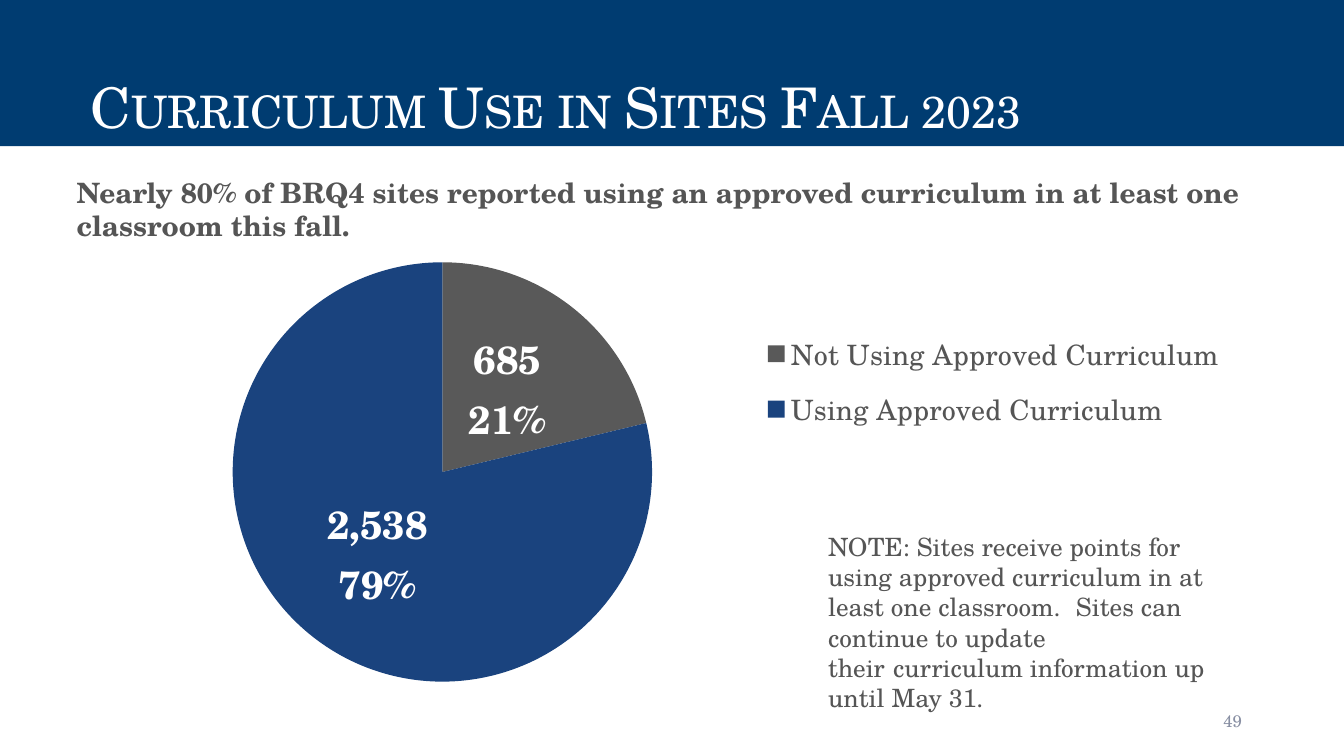
import lxml.etree
import pptx
import pptx.chart.data
import pptx.dml.color
import pptx.enum.chart
import pptx.enum.text
import pptx.oxml
import pptx.oxml.ns
import pptx.util

Cm = pptx.util.Cm
Pt = pptx.util.Pt
RGBColor = pptx.dml.color.RGBColor
Anchor = pptx.enum.text.MSO_ANCHOR
Align = pptx.enum.text.PP_ALIGN
qn = pptx.oxml.ns.qn

NAVY = RGBColor(0x00, 0x3C, 0x71)
BLUE = RGBColor(0x1A, 0x43, 0x7E)
SLATE = RGBColor(0x59, 0x59, 0x59)
TEXT_GREY = RGBColor(0x55, 0x55, 0x55)
PAGE_GREY = RGBColor(0x88, 0x8F, 0xA3)
WHITE = RGBColor(0xFF, 0xFF, 0xFF)
HARD_SPACE = chr(160)


class CurriculumSlide:
    """Holds the typeface and the slide that its methods add to."""

    typeface = "TeX Gyre Schola"

    def __init__(self, deck):
        self.slide = deck.slides.add_slide(deck.slide_layouts[5])

    def style(self, font, size, color, bold=False):
        font.name = self.typeface
        font.size = Pt(size)
        font.color.rgb = color
        font.bold = bold

    def place(self, shape, box):
        shape.left, shape.top, shape.width, shape.height = map(Cm, box)

    def title(self, wording, box):
        banner = self.slide.shapes.title
        self.place(banner, box)
        banner.fill.solid()
        banner.fill.fore_color.rgb = NAVY
        frame = banner.text_frame
        frame.text = wording
        frame.word_wrap = True
        frame.auto_size = pptx.enum.text.MSO_AUTO_SIZE.NONE
        frame.vertical_anchor = Anchor.BOTTOM
        frame.margin_left = Cm(2.29)
        line = frame.paragraphs[0]
        line.alignment = Align.LEFT
        line.line_spacing = 0.9
        font = line.runs[0].font
        self.style(font, 40, WHITE)
        line.runs[0]._r.get_or_add_rPr().set("cap", "small")

    def text(self, wording, box, size, color, bold=False,
             align=Align.LEFT, anchor=Anchor.TOP):
        frame = self.slide.shapes.add_textbox(*map(Cm, box)).text_frame
        frame.word_wrap = True
        frame.vertical_anchor = anchor
        frame.text = wording
        frame.paragraphs[0].alignment = align
        self.style(frame.paragraphs[0].runs[0].font, size, color, bold)

    def pie(self, slices, box, pie_area, legend_area):
        """Slices are (category, value, colour); areas are chart fractions."""
        data = pptx.chart.data.CategoryChartData(number_format="#,##0")
        data.categories = [category for category, _, _ in slices]
        data.add_series("Series 1", [value for _, value, _ in slices])
        chart = self.slide.shapes.add_chart(
            pptx.enum.chart.XL_CHART_TYPE.PIE, *map(Cm, box), data).chart
        chart.has_title = False
        chart.font.name = "Arial"
        chart.font.size = Pt(10)
        chart.font.color.rgb = NAVY

        plot = chart.plots[0]
        plot.vary_by_categories = True
        for index, (_, _, color) in enumerate(slices):
            wedge = plot.series[0].points[index].format
            wedge.fill.solid()
            wedge.fill.fore_color.rgb = color
            wedge.line.fill.background()

        labels = plot.series[0].data_labels
        labels.show_value = True
        labels.show_percentage = True
        labels.position = pptx.enum.chart.XL_LABEL_POSITION.CENTER
        self.style(labels.font, 28, WHITE, bold=True)
        separator = lxml.etree.Element(qn("c:separator"))
        separator.text = "\n"
        last_flag = labels._element.find(qn("c:showBubbleSize"))
        if last_flag is None:
            last_flag = labels._element.find(qn("c:showPercent"))
        last_flag.addnext(separator)

        chart.has_legend = True
        legend = chart.legend
        legend.position = pptx.enum.chart.XL_LEGEND_POSITION.RIGHT
        legend.include_in_layout = False
        self.style(legend.font, 20, TEXT_GREY)

        plot_area = chart._chartSpace.chart.plotArea
        for old in plot_area.findall(qn("c:layout")):
            plot_area.remove(old)
        plot_area.insert(0, self.layout(pie_area, inner=True))
        for old in legend._element.findall(qn("c:layout")):
            legend._element.remove(old)
        legend._element.find(qn("c:legendPos")).addnext(
            self.layout(legend_area))

    def layout(self, area, inner=False):
        layout = lxml.etree.Element(qn("c:layout"))
        manual = lxml.etree.SubElement(layout, qn("c:manualLayout"))
        settings = [("layoutTarget", "inner")] if inner else []
        settings += [("xMode", "edge"), ("yMode", "edge")]
        settings += zip("xywh", map(str, area))
        for tag, setting in settings:
            lxml.etree.SubElement(manual, qn("c:" + tag)).set("val", setting)
        return layout


def main():
    deck = pptx.Presentation()
    deck.slide_width, deck.slide_height = Cm(33.87), Cm(19.05)
    page = CurriculumSlide(deck)
    page.title("Curriculum Use in Sites Fall 2023", (0, 0, 33.87, 3.68))
    page.text("49", (23.93, 17.65, 7.62, 1.02), 12, PAGE_GREY,
              align=Align.RIGHT, anchor=Anchor.MIDDLE)
    page.pie(
        [("Not Using Approved Curriculum", 685, SLATE),
         ("Using Approved Curriculum", 2538, BLUE)],
        (1.47, 6.25, 31.22, 12.01),
        pie_area=(0.14, 0.03, 0.34, 0.88),
        legend_area=(0.57, 0.15, 0.37, 0.26))
    page.text(
        "NOTE: Sites receive points for using approved curriculum in at "
        f"least one classroom.{HARD_SPACE} Sites can continue to update "
        f"their{HARD_SPACE}curriculum information up until May 31.",
        (20.62, 13.26, 10.9, 4.11), 18, TEXT_GREY)
    page.text(
        "Nearly 80% of BRQ4 sites reported using an approved curriculum "
        "in at least one classroom this fall.",
        (1.68, 4.29, 30.51, 1.96), 20, TEXT_GREY, bold=True)
    deck.save("out.pptx")


if __name__ == "__main__":
    main()
